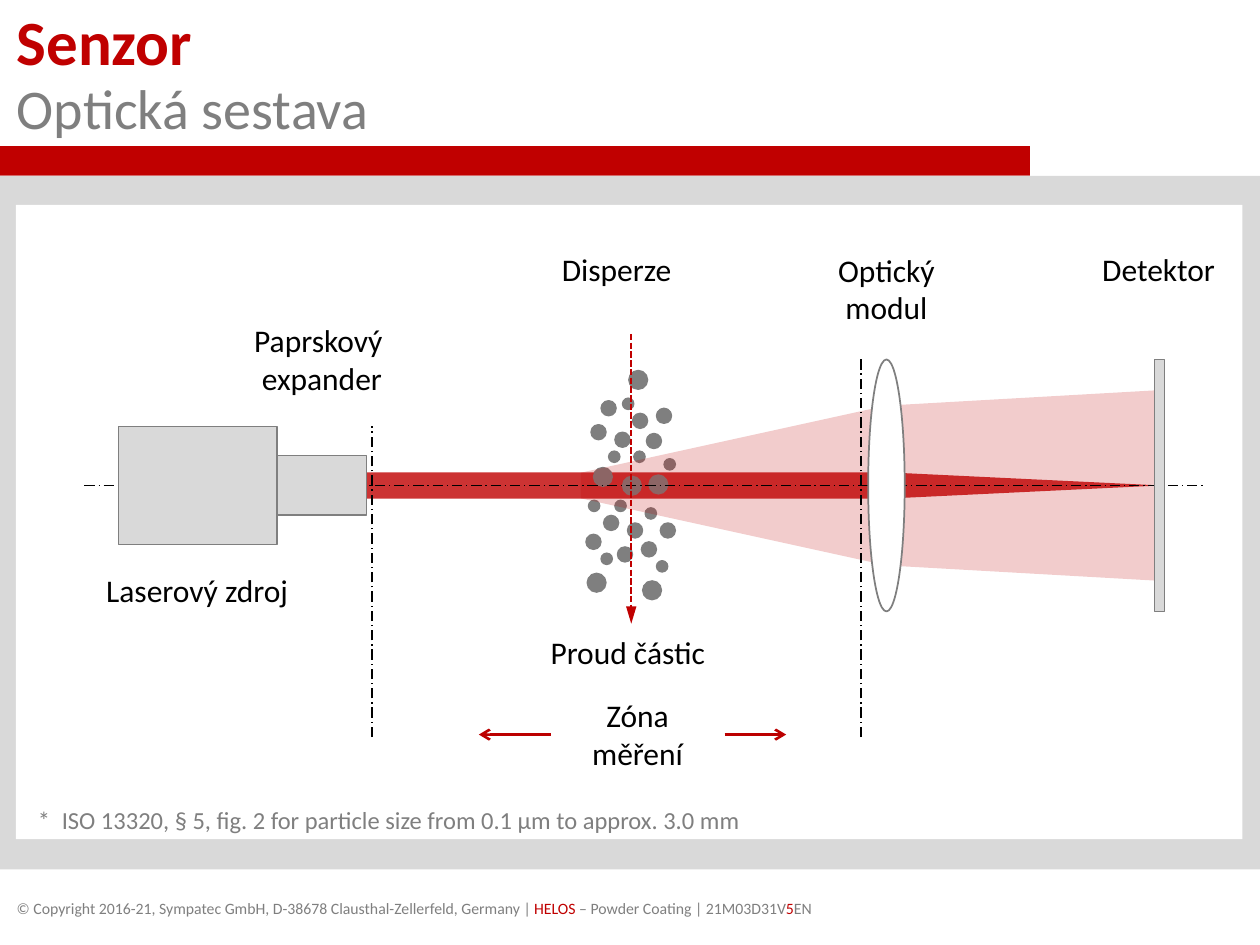
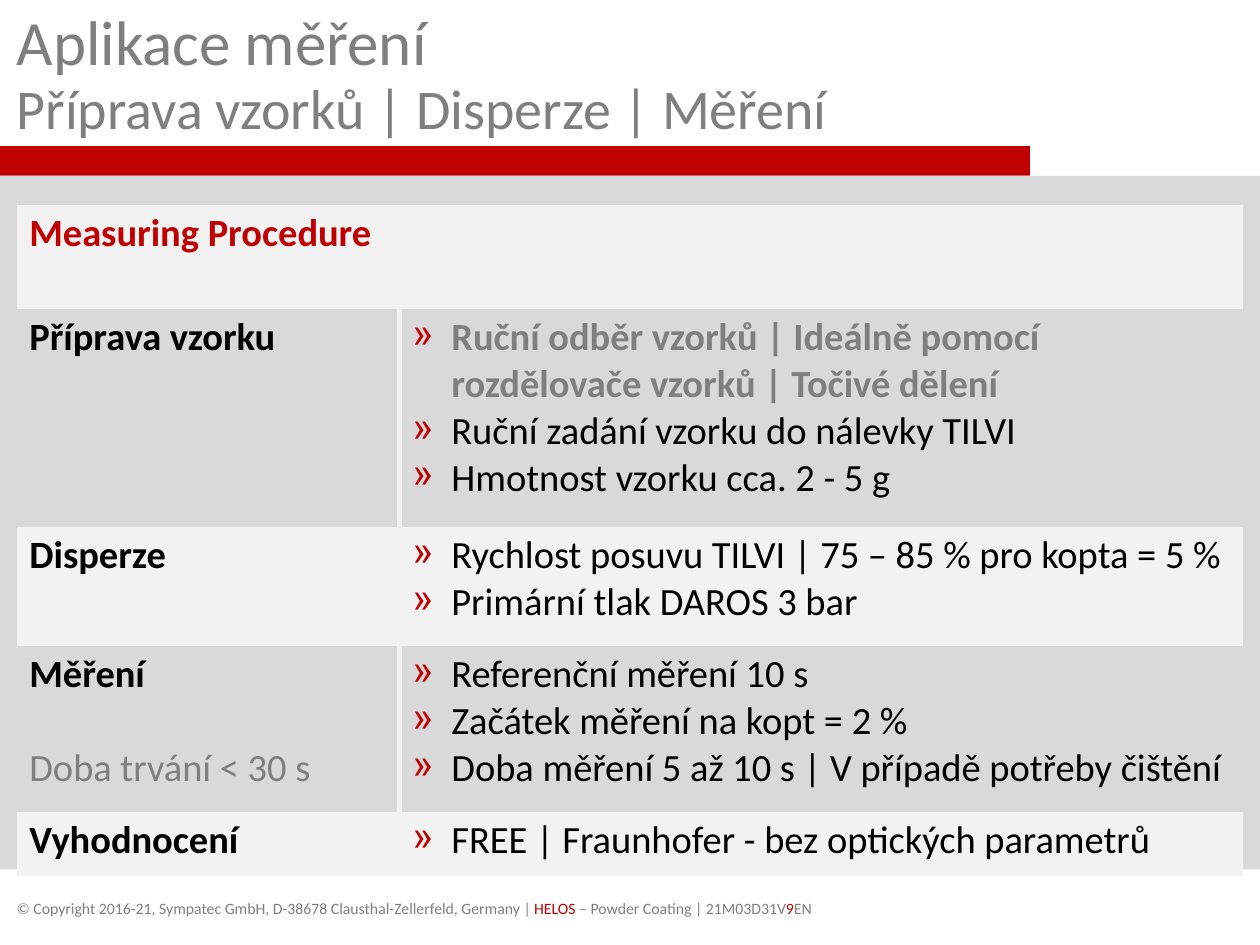
import pptx
import pptx.util
import pptx.dml.color
import pptx.enum.dml
import pptx.enum.shapes
import pptx.enum.text
import pptx.oxml.ns
import lxml.etree
from dataclasses import dataclass

SHAPES = pptx.enum.shapes.MSO_SHAPE
DASHES = pptx.enum.dml.MSO_LINE
ALIGN = pptx.enum.text.PP_ALIGN


@dataclass(frozen=True)
class Theme:
    font: str = "Calibri"
    red: str = "C00000"
    arrow_red: str = "BC0000"
    gray: str = "7F7F7F"
    band: str = "D9D9D9"
    pale: str = "F2F2F2"
    white: str = "FFFFFF"
    black: str = "000000"
    title: int = 36
    subtitle: int = 32
    table: int = 22
    label: int = 18
    note: int = 14
    footer: int = 9


THEME = Theme()
WIDTH, HEIGHT = 10, 7.5
COLUMNS = 100
UNIT = pptx.util.Inches(WIDTH) / COLUMNS
MARGIN = 1.33
BANDS = [((-0.4, 11.6, 82.15, 2.35), THEME.red), ((-0.4, 13.95, 100.8, 55.05), THEME.band)]
FOOTER = ("© Copyright 2016-21, Sympatec GmbH, D-38678 Clausthal-Zellerfeld, Germany | ",
          "HELOS", " – Powder Coating | 21M03D31V")

SENSOR = {"title": "Senzor", "subtitle": "Optická sestava", "version": "5"}
PANEL = (1.25, 16.25, 97.35, 50.35)
AXIS = 38.53
BEAMS = [
    (SHAPES.RECTANGLE, 29.1, 41.3, 2.1, 0, None, 80),
    (SHAPES.ISOSCELES_TRIANGLE, 70.3, 21.8, 2.1, 90, 0.5, 80),
]
SCATTERED = [
    (SHAPES.TRAPEZOID, 46.1, 24.3, 12.7, 270, 0.42, 20),
    (SHAPES.TRAPEZOID, 70.4, 21.3, 15.1, 270, 0.08, 20),
]
DEVICES = [
    (SHAPES.RECTANGLE, 9.4, 12.6, 9.4, THEME.band, 0.75),
    (SHAPES.RECTANGLE, 22, 7.1, 4.7, THEME.band, 0.75),
    (SHAPES.OVAL, 68.9, 2.9, 20, THEME.white, 1),
    (SHAPES.RECTANGLE, 91.65, 0.75, 20, THEME.band, 0.75),
]
PARTICLES = {
    0.9: [(50.3, 35.8), (48.8, 39.7), (49.4, 31.6), (46.7, 39.7), (48.3, 35.8),
          (47.7, 43.9), (51.2, 40.3), (52.7, 36.4), (52.1, 44.5)],
    1.2: [(49, 43.4), (49.8, 41.5), (50.2, 32.8), (48.8, 34.3), (47.7, 31.8), (46.9, 33.7),
          (46.5, 42.4), (47.9, 40.9), (52.1, 32.4), (51.3, 34.4), (50.9, 43), (52.4, 41.5)],
    1.5: [(49.4, 37.8), (49.9, 29.4), (47.1, 37.1), (46.6, 45.5), (51.5, 37.7), (51, 46.1)],
}
LABELS = [
    ("Laserový zdroj", (7.35, 44.85, 16.6, 4)),
    ("Paprskový \nexpander", (19.1, 25, 12.9, 7.1)),
    ("Disperze", (43.53, 19.35, 10.8, 4)),
    ("Proud částic", (42.63, 49.75, 14.4, 4)),
    ("Optický\nmodul", (65.4, 19.4, 9.9, 7.1)),
    ("Detektor", (86.4, 19.35, 11.1, 4)),
]
ZONE = ("Zóna měření", (43.7, 54.75, 13.8, 7.1))
ZONE_ARROWS = [(3, 62.4), (1, 38)]
ZONE_MIDDLE = ZONE[1][1] + ZONE[1][3] / 2
ZONE_LIMITS = [(68.33, 28.5), (29.53, 33.8)]
ZONE_BOTTOM = 58.5
NOTE = ("*\tISO 13320, § 5, fig. 2 for particle size from 0.1 µm to approx. 3.0 mm",
        (2.2, 63.5, 59.5, 3.2))
NOTE_TAB = 1.9

PROCEDURE = {"title": "Aplikace měření", "version": "9",
             "subtitle": "Příprava vzorků | Disperze | Měření"}
PLAIN_TABLE_STYLE = "{2D5ABB26-0587-4C30-8999-92F81FD0307C}"
TABLE_TOP = 16.27
TABLE_COLUMNS = [30.4, 66.95]
TABLE_ROWS = [
    (8.25, "Measuring Procedure", None, []),
    (17.3, "Příprava vzorku", None,
     ["Ruční odběr vzorků | Ideálně pomocí rozdělovače vzorků | Točivé dělení",
      "Ruční zadání vzorku do nálevky TILVI", "Hmotnost vzorku cca. 2 - 5 g"]),
    (9.45, "Disperze", None,
     ["Rychlost posuvu TILVI | 75 – 85 % pro kopta = 5 %", "Primární tlak DAROS 3 bar"]),
    (13.2, "Měření", "Doba trvání < 30 s",
     ["Referenční měření 10 s", "Začátek měření na kopt = 2 %",
      "Doba měření 5 až 10 s | V případě potřeby čištění"]),
    (5.05, "Vyhodnocení", None, ["FREE | Fraunhofer - bez optických parametrů"]),
]
HIGHLIGHT = TABLE_ROWS[1][3][0]
BULLET_INDENT = 3.1


def grid(*values):
    return [round(value * UNIT) for value in values]


def rgb(color):
    return pptx.dml.color.RGBColor.from_string(color)


def add_element(parent, tag, **attributes):
    element = lxml.etree.SubElement(parent, pptx.oxml.ns.qn(tag))
    for name, value in attributes.items():
        element.set(name, str(value))
    return element


def set_font(font, size, color, bold=False):
    font.name = THEME.font
    font.size = pptx.util.Pt(size)
    font.bold = bold
    font.color.rgb = rgb(color)


def add_run(paragraph, text, size, color, bold=False):
    run = paragraph.add_run()
    run.text = text
    set_font(run.font, size, color, bold)


def add_shape(slide, preset, box, fill, line=None, alpha=None):
    shape = slide.shapes.add_shape(preset, *grid(*box))
    shape.shadow.inherit = False
    shape.fill.solid()
    shape.fill.fore_color.rgb = rgb(fill)
    if alpha:
        color = shape.fill._xPr.find(".//" + pptx.oxml.ns.qn("a:srgbClr"))
        add_element(color, "a:alpha", val=alpha * 1000)
    if line:
        shape.line.color.rgb = rgb(THEME.gray)
        shape.line.width = pptx.util.Pt(line)
    else:
        shape.line.fill.background()
    return shape


def add_axial_shape(slide, preset, left, width, height, fill, line):
    return add_shape(slide, preset, (left, AXIS - height / 2, width, height), fill, line)


def add_light(slide, preset, left, length, spread, rotation, adjustment, alpha):
    width, height = (spread, length) if rotation else (length, spread)
    box = (left + (length - width) / 2, AXIS - height / 2, width, height)
    shape = add_shape(slide, preset, box, THEME.red, alpha=alpha)
    shape.rotation = rotation
    if adjustment:
        shape.adjustments[0] = adjustment


def add_line(slide, start, end, color, width, dash=None, arrow=None, length="med"):
    connector = slide.shapes.add_connector(
        pptx.enum.shapes.MSO_CONNECTOR.STRAIGHT, *grid(*start, *end))
    connector.line.color.rgb = rgb(color)
    connector.line.width = pptx.util.Pt(width)
    if dash:
        connector.line.dash_style = dash
    if arrow:
        add_element(connector.line._get_or_add_ln(), "a:tailEnd", type=arrow, len=length)
    add_element(connector._element.spPr, "a:effectLst")
    return connector


def add_text_box(slide, box, wrap=False, insets=None, middle=False):
    shape = slide.shapes.add_textbox(*grid(*box))
    frame = shape.text_frame
    frame.word_wrap = wrap
    if insets:
        (frame.margin_left, frame.margin_top,
         frame.margin_right, frame.margin_bottom) = grid(*insets)
    if middle:
        frame.vertical_anchor = pptx.enum.text.MSO_ANCHOR.MIDDLE
    return shape


def add_label(slide, text, box, wrap=False):
    shape = add_text_box(slide, box, wrap)
    shape.text_frame.text = text
    for paragraph in shape.text_frame.paragraphs:
        paragraph.alignment = ALIGN.CENTER
        set_font(paragraph.font, THEME.label, THEME.black)
    return shape


def add_base_slide(presentation, content, title_color, title_bold):
    slide = presentation.slides.add_slide(presentation.slide_layouts[6])
    for box, color in BANDS:
        add_shape(slide, SHAPES.RECTANGLE, box, color)
    footer = add_text_box(slide, (MARGIN, 71.3, 78.6, 1.5), insets=(0, 0, 0, 0), middle=True)
    paragraph = footer.text_frame.paragraphs[0]
    for index, text in enumerate((*FOOTER, content["version"], "EN")):
        add_run(paragraph, text, THEME.footer, THEME.red if index % 2 else THEME.gray)
    title = add_text_box(slide, (MARGIN, 0, 89, 11.6), True, (0, 1.2, 1.2, 0.4), True)
    paragraph = title.text_frame.paragraphs[0]
    paragraph.line_spacing = pptx.util.Pt(THEME.title)
    add_run(paragraph, content["title"], THEME.title, title_color, title_bold)
    paragraph.add_line_break()
    add_run(paragraph, content["subtitle"], THEME.subtitle, THEME.gray)
    return slide


def build_sensor(presentation):
    slide = add_base_slide(presentation, SENSOR, THEME.red, True)
    add_shape(slide, SHAPES.RECTANGLE, PANEL, THEME.white)
    for beam in BEAMS:
        add_light(slide, *beam)
    for diameter, positions in PARTICLES.items():
        for left, top in positions:
            add_shape(slide, SHAPES.OVAL, (left, top, diameter, diameter), THEME.gray, 0.75)
    for light in SCATTERED:
        add_light(slide, *light)

    text, box = NOTE
    note = add_text_box(slide, box, insets=(0.8, 0.4, 0.8, 0.4))
    paragraph = note.text_frame.paragraphs[0]
    paragraph.text = text
    tabs = add_element(paragraph._p.get_or_add_pPr(), "a:tabLst")
    add_element(tabs, "a:tab", pos=grid(NOTE_TAB)[0], algn="l")
    set_font(paragraph.font, THEME.note, THEME.gray)

    add_line(slide, (6.7, AXIS), (95.7, AXIS), THEME.black, 0.75, DASHES.LONG_DASH_DOT)
    for device in DEVICES:
        add_axial_shape(slide, *device)
    for label in LABELS:
        add_label(slide, *label)
    add_line(slide, (50.1, 26.5), (50.1, 49.5), THEME.red, 1.25,
             DASHES.SQUARE_DOT, "triangle", "lg")

    zone = add_label(slide, *ZONE, wrap=True)
    for side, end in ZONE_ARROWS:
        arrow = add_line(slide, (end, ZONE_MIDDLE), (end, ZONE_MIDDLE),
                         THEME.arrow_red, 1.5, arrow="arrow")
        arrow.begin_connect(zone, side)
    for column, top in ZONE_LIMITS:
        add_line(slide, (column, ZONE_BOTTOM), (column, top),
                 THEME.black, 0.75, DASHES.LONG_DASH_DOT)


def add_cell_border(cell, side):
    line = lxml.etree.Element(pptx.oxml.ns.qn("a:" + side), w=str(pptx.util.Pt(3)))
    fill = add_element(line, "a:solidFill")
    add_element(fill, "a:srgbClr", val=THEME.pale)
    cell._tc.get_or_add_tcPr().insert(0, line)


def add_cell_paragraph(cell, index, text, color, bold=False, bullet=False):
    frame = cell.text_frame
    paragraph = frame.add_paragraph() if index else frame.paragraphs[0]
    paragraph.text = text
    if bullet:
        properties = paragraph._p.get_or_add_pPr()
        indent = grid(BULLET_INDENT)[0]
        properties.set("marL", str(indent))
        properties.set("indent", str(-indent))
        bullet_color = add_element(properties, "a:buClr")
        add_element(bullet_color, "a:srgbClr", val=THEME.red)
        add_element(properties, "a:buChar", char="»")
    set_font(paragraph.font, THEME.table, color, bold)
    return paragraph


def build_procedure(presentation):
    slide = add_base_slide(presentation, PROCEDURE, THEME.gray, False)
    box = (MARGIN, TABLE_TOP, sum(TABLE_COLUMNS), sum(row[0] for row in TABLE_ROWS))
    table = slide.shapes.add_table(len(TABLE_ROWS), len(TABLE_COLUMNS), *grid(*box)).table
    table._tbl.tblPr.find(pptx.oxml.ns.qn("a:tableStyleId")).text = PLAIN_TABLE_STYLE
    table.first_row = table.horz_banding = False
    for column, width in zip(table.columns, grid(*TABLE_COLUMNS)):
        column.width = width
    for index, (height, heading, remark, steps) in enumerate(TABLE_ROWS):
        table.rows[index].height = grid(height)[0]
        name_cell, steps_cell = table.cell(index, 0), table.cell(index, 1)
        for cell, side in ((name_cell, "lnR"), (steps_cell, "lnL")):
            cell.margin_top = cell.margin_bottom = grid(0.4)[0]
            cell.fill.solid()
            cell.fill.fore_color.rgb = rgb(THEME.band if index % 2 else THEME.pale)
            add_cell_border(cell, side)
        add_cell_paragraph(name_cell, 0, heading, THEME.black if index else THEME.red, True)
        if remark:
            paragraph = add_cell_paragraph(name_cell, 1, remark, THEME.gray)
            paragraph.space_before = pptx.util.Pt(THEME.table * 1.22)
        for position, step in enumerate(steps):
            strong = step == HIGHLIGHT
            add_cell_paragraph(steps_cell, position, step,
                               THEME.gray if strong else THEME.black, strong, True)


def main():
    presentation = pptx.Presentation()
    presentation.slide_width = pptx.util.Inches(WIDTH)
    presentation.slide_height = pptx.util.Inches(HEIGHT)
    build_sensor(presentation)
    build_procedure(presentation)
    presentation.save("out.pptx")


if __name__ == "__main__":
    main()
